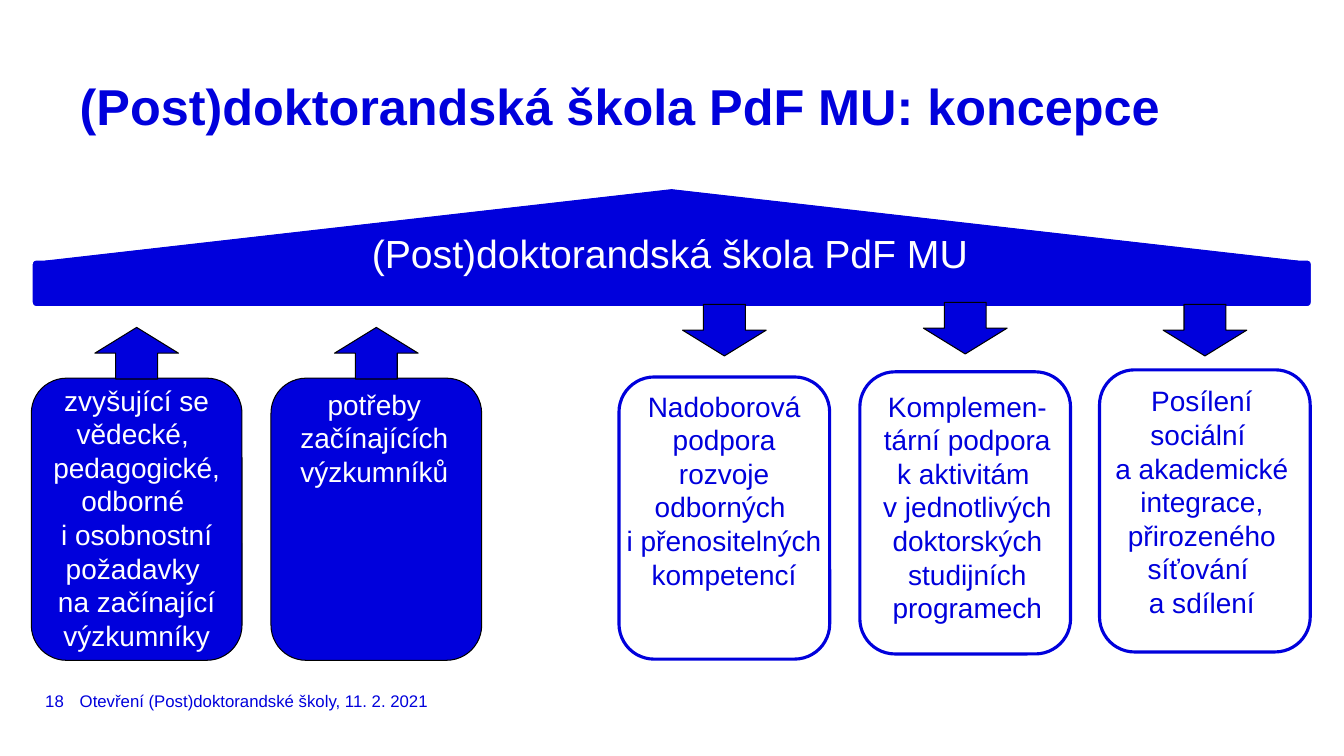
from pptx import Presentation
from pptx import util as u
from pptx.dml.color import RGBColor
from pptx.enum import shapes, text

BLUE = RGBColor(0x00, 0x00, 0xDC)
WHITE = RGBColor(0xFF, 0xFF, 0xFF)
BLACK = RGBColor(0x00, 0x00, 0x00)

PILLAR_WIDTH, PILLAR_HEIGHT = 5.31, 7.11
ARROW_LENGTH, ARROW_WIDTH = 1.3, 2.11
UP, DOWN = 270, 90

# left, top, arrow middle, text (left, top, width, height), paragraphs
NEEDS = [
    (0.79, 9.53, 8.9, (0.79, 9.53, 5.31, 7.95),
     ["zvyšující se vědecké, ", "pedagogické, odborné ",
      "i osobnostní požadavky ", "na začínající výzkumníky"]),
    (6.83, 9.53, 8.9, (6.78, 9.63, 5.31, 4.01),
     ["potřeby začínajících výzkumníků"]),
]
OFFERS = [
    (15.6, 9.5, 8.32, (15.47, 9.68, 5.56, 5.38),
     ["Nadoborová podpora rozvoje odborných ", "i přenositelných kompetencí"]),
    (21.67, 9.37, 8.27, (21.79, 9.68, 5.18, 6.25),
     ["Komplemen-tární podpora k aktivitám ",
      "v jednotlivých doktorských studijních programech"]),
    (27.71, 9.32, 8.32, (27.51, 9.55, 5.56, 7.09),
     ["Posílení sociální ", "a akademické integrace, přirozeného síťování ",
      "a sdílení"]),
]


class SlideBuilder:
    font = "Arial"

    def __init__(self, slide):
        self.slide = slide

    def shape(self, preset, left, top, width, height, fill, line, line_width=0.75):
        shape = self.slide.shapes.add_shape(
            preset, u.Cm(left), u.Cm(top), u.Cm(width), u.Cm(height))
        shape.shadow.inherit = False
        shape.fill.solid()
        shape.fill.fore_color.rgb = fill
        shape.line.color.rgb = line
        shape.line.width = u.Pt(line_width)
        return shape

    def text(self, left, top, width, height, paragraphs, size, color, bold=False,
             align=None, wrap=True, inset=True, grow=False,
             anchor=text.MSO_ANCHOR.TOP, line_spacing=None):
        box = self.slide.shapes.add_textbox(
            u.Cm(left), u.Cm(top), u.Cm(width), u.Cm(height))
        frame = box.text_frame
        frame.word_wrap = wrap
        frame.vertical_anchor = anchor
        if grow:
            frame.auto_size = text.MSO_AUTO_SIZE.SHAPE_TO_FIT_TEXT
        if not inset:
            frame.margin_left = frame.margin_right = 0
            frame.margin_top = frame.margin_bottom = 0
        frame.text = "\n".join(paragraphs)
        for paragraph in frame.paragraphs:
            paragraph.alignment = align
            paragraph.line_spacing = line_spacing
            paragraph.font.name = self.font
            paragraph.font.size = u.Pt(size)
            paragraph.font.bold = bold
            paragraph.font.color.rgb = color

    def footer(self, left, width, words, wrap=True):
        self.text(left, 17.3, width, 0.71, [words], 12, BLUE, wrap=wrap,
                  inset=False, anchor=text.MSO_ANCHOR.MIDDLE)

    def pillar(self, left, top, fill, line, line_width):
        self.shape(shapes.MSO_SHAPE.ROUNDED_RECTANGLE, left, top,
                   PILLAR_WIDTH, PILLAR_HEIGHT, fill, line, line_width)

    def arrow(self, center, middle, rotation):
        arrow = self.shape(shapes.MSO_SHAPE.RIGHT_ARROW, center - ARROW_LENGTH / 2,
                           middle - ARROW_WIDTH / 2, ARROW_LENGTH, ARROW_WIDTH,
                           BLUE, BLACK)
        arrow.rotation = rotation

    def roof(self):
        base = self.shape(shapes.MSO_SHAPE.ROUNDED_RECTANGLE,
                          0.79, 6.53, 32.28, 1.22, BLUE, WHITE, 2)
        base.adjustments[0] = 0.1
        self.shape(shapes.MSO_SHAPE.ISOSCELES_TRIANGLE,
                   1.14, 4.78, 31.57, 1.8, BLUE, BLUE)
        self.text(9.12, 5.66, 15.72, 2.64, ["(Post)doktorandská škola PdF MU"],
                  28, WHITE, wrap=False, grow=True)

    def pillars(self, items, rotation, fill, line, line_width, color):
        """Draw a set of pillars, each with its arrow and its wording."""
        for left, top, arrow_middle, text_area, paragraphs in items:
            self.pillar(left, top, fill, line, line_width)
            self.arrow(left + PILLAR_WIDTH / 2, arrow_middle, rotation)
            self.text(*text_area, paragraphs, 20, color,
                      align=text.PP_ALIGN.CENTER, grow=True)


def main():
    presentation = Presentation()
    presentation.slide_width = u.Cm(33.87)
    presentation.slide_height = u.Cm(19.05)
    builder = SlideBuilder(presentation.slides.add_slide(presentation.slide_layouts[6]))

    builder.footer(2.01, 22, "Otevření (Post)doktorandské školy, 11. 2. 2021")
    builder.footer(1.14, 0.71, "18", wrap=False)
    builder.text(2.01, 2.01, 29.87, 1.24, ["(Post)doktorandská škola PdF MU: koncepce"],
                 36, BLUE, bold=True, inset=False, line_spacing=u.Pt(40))
    builder.roof()
    builder.pillars(NEEDS, UP, BLUE, BLACK, 0.75, WHITE)
    builder.pillars(OFFERS, DOWN, WHITE, BLUE, 2.25, BLUE)

    presentation.save("out.pptx")


if __name__ == "__main__":
    main()
